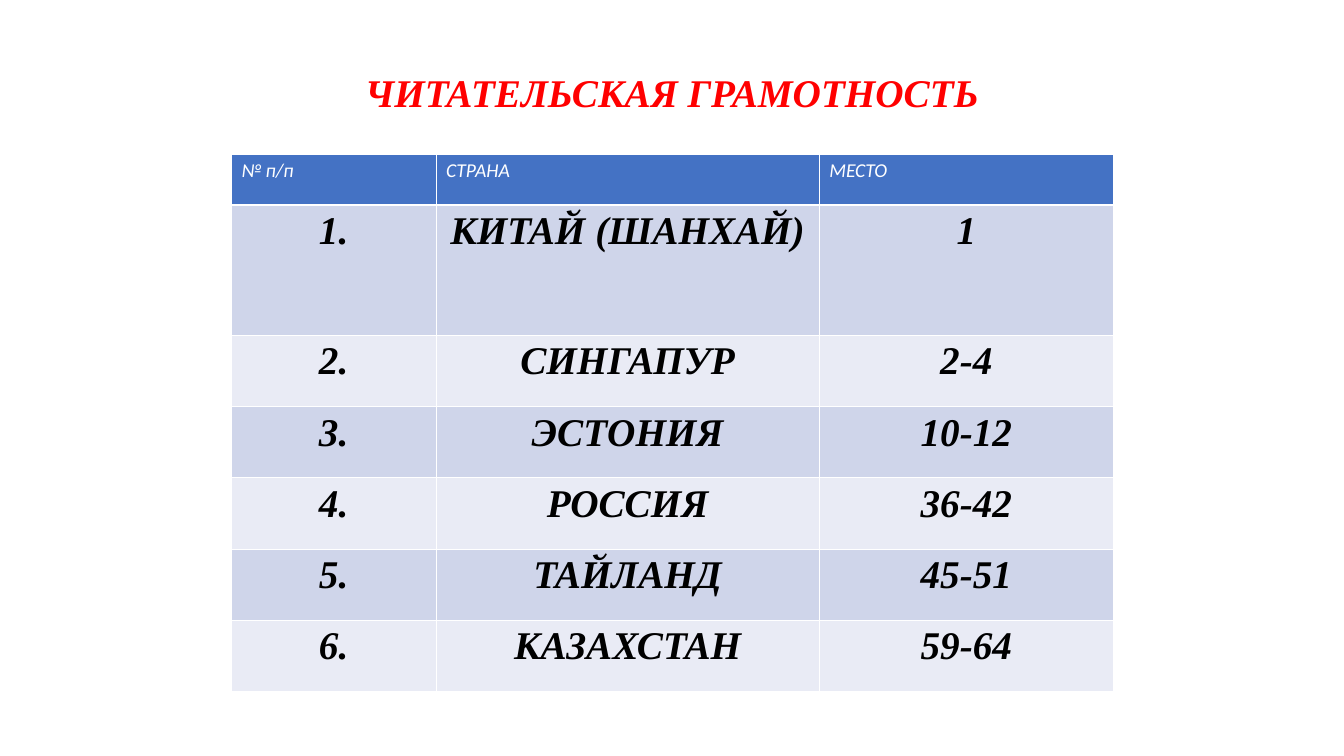
from dataclasses import dataclass

from lxml.etree import SubElement
from pptx import Presentation
from pptx.dml.color import RGBColor
from pptx.enum.text import MSO_ANCHOR, PP_ALIGN
from pptx.oxml.ns import qn
from pptx.util import Inches, Pt


@dataclass(frozen=True)
class TextStyle:
    size: float
    font: str
    color: str
    bold: bool
    align: PP_ALIGN


@dataclass(frozen=True)
class Country:
    name: str
    place: str


TITLE = TextStyle(42, "Times New Roman", "FF0000", True, PP_ALIGN.CENTER)
HEADER = TextStyle(21, "Calibri", "FFFFFF", False, PP_ALIGN.LEFT)
BODY = TextStyle(42, "Times New Roman", "000000", True, PP_ALIGN.CENTER)

HEADER_FILL = "4472C4"
BAND_FILLS = ("CFD5EA", "E9EBF5")
BORDER_COLOR = "FFFFFF"

HEADINGS = ("№ п/п", "СТРАНА", "МЕСТО")
COUNTRIES = (
    Country("КИТАЙ (ШАНХАЙ)", "1"),
    Country("СИНГАПУР", "2-4"),
    Country("ЭСТОНИЯ", "10-12"),
    Country("РОССИЯ", "36-42"),
    Country("ТАЙЛАНД", "45-51"),
    Country("КАЗАХСТАН", "59-64"),
)
COLUMN_WIDTHS = (3.05, 5.7, 4.38)
ROW_HEIGHTS = (0.76, 1.94) + (1.06,) * (len(COUNTRIES) - 1)


def rgb(color: str) -> RGBColor:
    return RGBColor.from_string(color)


def write_text(tf, text: str, style: TextStyle) -> None:
    tf.word_wrap = True
    tf.margin_left = tf.margin_right = Inches(0.15)
    tf.margin_top = tf.margin_bottom = Inches(0.07)
    tf.vertical_anchor = MSO_ANCHOR.TOP
    p = tf.paragraphs[0]
    p.alignment = style.align
    r = p.add_run()
    r.text = text
    r.font.size = Pt(style.size)
    r.font.name = style.font
    r.font.bold = style.bold
    r.font.italic = True
    r.font.color.rgb = rgb(style.color)


def set_borders(cell, top: float = 1, bottom: float = 1) -> None:
    tc_pr = cell._tc.get_or_add_tcPr()
    widths = {"a:lnL": 1, "a:lnR": 1, "a:lnT": top, "a:lnB": bottom}
    for position, (tag, width) in enumerate(widths.items()):
        line = SubElement(tc_pr, qn(tag), w=str(Pt(width)))
        fill = SubElement(line, qn("a:solidFill"))
        SubElement(fill, qn("a:srgbClr"), val=BORDER_COLOR)
        tc_pr.insert(position, line)  # borders come before the cell fill


def fill_cell(cell, text: str, style: TextStyle, color: str) -> None:
    write_text(cell.text_frame, text, style)
    cell.margin_left = cell.margin_right = Inches(0.15)
    cell.margin_top = cell.margin_bottom = Inches(0.07)
    cell.fill.solid()
    cell.fill.fore_color.rgb = rgb(color)


def add_title(s, text: str) -> None:
    sp = s.shapes.title
    sp.left, sp.top = Inches(3.79), Inches(0.94)
    sp.width, sp.height = Inches(12.42), Inches(1.16)
    write_text(sp.text_frame, text, TITLE)


def add_ranking(s) -> None:
    rows = [HEADINGS]
    rows += [(f"{n}.", c.name, c.place) for n, c in enumerate(COUNTRIES, 1)]
    table = s.shapes.add_table(
        len(rows), len(HEADINGS), Inches(3.44), Inches(2.29),
        Inches(sum(COLUMN_WIDTHS)), Inches(sum(ROW_HEIGHTS)),
    ).table
    for column, width in zip(table.columns, COLUMN_WIDTHS):
        column.width = Inches(width)
    for row, height in zip(table.rows, ROW_HEIGHTS):
        row.height = Inches(height)

    for i, texts in enumerate(rows):
        style = BODY if i else HEADER
        color = BAND_FILLS[(i - 1) % 2] if i else HEADER_FILL
        for j, text in enumerate(texts):
            cell = table.cell(i, j)
            fill_cell(cell, text, style, color)
            # A thicker rule parts the header from the body
            set_borders(cell, top=3 if i == 1 else 1, bottom=1 if i else 3)


def main() -> None:
    prs = Presentation()
    prs.slide_width, prs.slide_height = Inches(20), Inches(11.25)
    s = prs.slides.add_slide(prs.slide_layouts[5])
    # Heading and ranking table
    add_title(s, "ЧИТАТЕЛЬСКАЯ ГРАМОТНОСТЬ")
    add_ranking(s)
    prs.save("out.pptx")


if __name__ == "__main__":
    main()
